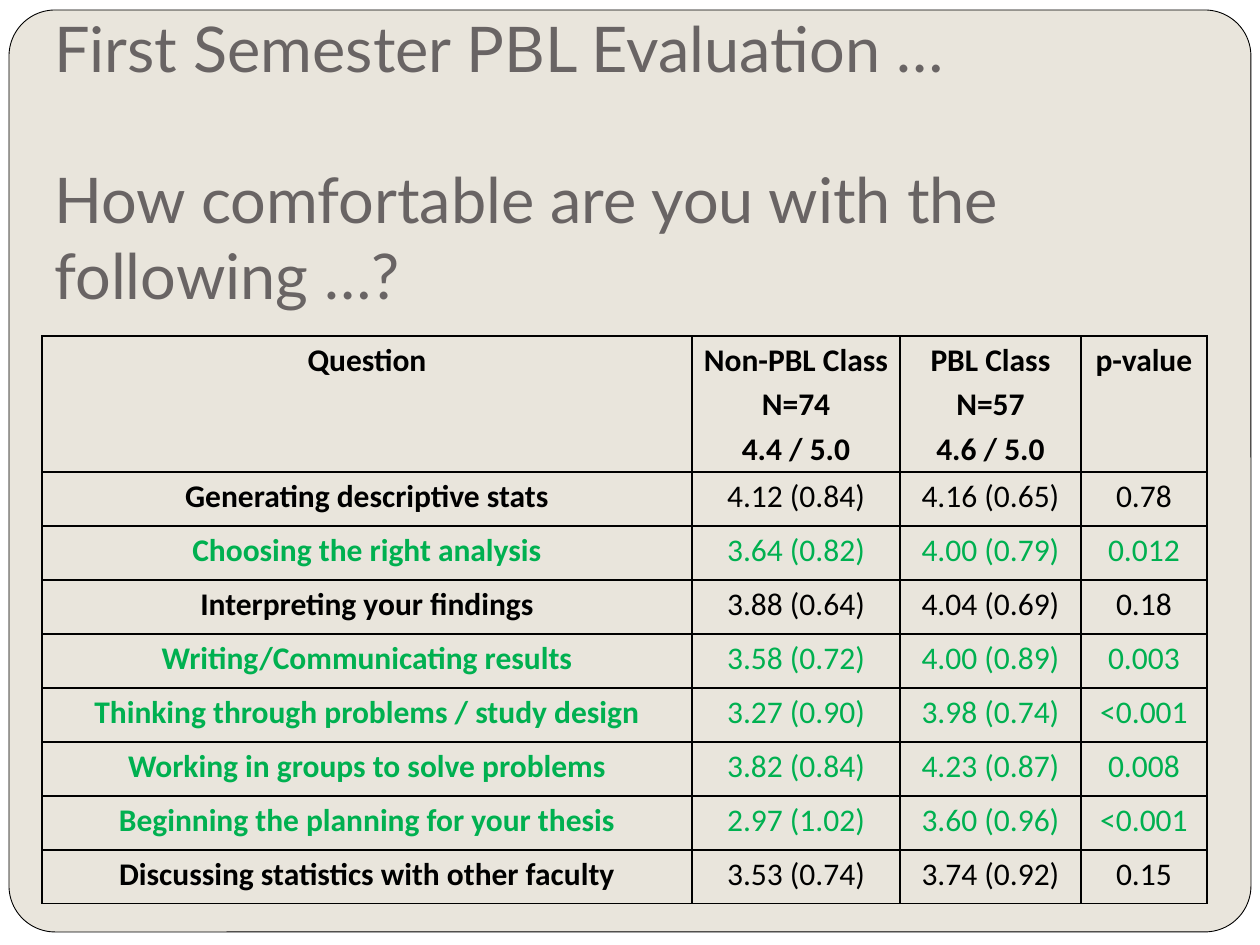
"""Build the first semester PBL evaluation slide."""
from dataclasses import dataclass

from lxml.etree import SubElement
from pptx import Presentation
from pptx.dml.color import RGBColor
from pptx.enum.shapes import MSO_SHAPE
from pptx.enum.text import MSO_ANCHOR, MSO_AUTO_SIZE, PP_ALIGN
from pptx.oxml.ns import qn
from pptx.util import Emu, Pt


@dataclass(frozen=True)
class Theme:
    paper: str = "FFFFFF"
    panel: str = "E9E5DC"
    ink: str = "000000"
    title: str = "696464"
    significant: str = "00B050"
    title_font: str = "Lato"
    table_font: str = "Calibri"
    title_size: int = 36
    table_size: int = 18


@dataclass(frozen=True)
class Box:
    left: int
    top: int
    width: int
    height: int


@dataclass(frozen=True)
class Result:
    question: str
    non_pbl: str
    pbl: str
    p_value: str
    significant: bool = False


THEME = Theme()
PAGE = Box(0, 0, 1260, 945)
PANEL = Box(9, 10, 1242, 922)
TITLE = Box(42, 168, 1187, 157)
TABLE = Box(42, 336, 1165, 568)
COLUMN_WIDTHS = (650, 208, 181, 126)
HEADER_HEIGHT, ROW_HEIGHT = 136, 54
TITLE_LINES = ("First Semester PBL Evaluation …", "How comfortable are you with the following …?")
HEADER = ("Question", "Non-PBL Class\nN=74\n4.4 / 5.0", "PBL Class\nN=57\n4.6 / 5.0", "p-value")
RESULTS = (
    Result("Generating descriptive stats", "4.12 (0.84)", "4.16 (0.65)", "0.78"),
    Result("Choosing the right analysis", "3.64 (0.82)", "4.00 (0.79)", "0.012", True),
    Result("Interpreting your findings", "3.88 (0.64)", "4.04 (0.69)", "0.18"),
    Result("Writing/Communicating results", "3.58 (0.72)", "4.00 (0.89)", "0.003", True),
    Result("Thinking through problems / study design", "3.27 (0.90)", "3.98 (0.74)", "<0.001", True),
    Result("Working in groups to solve problems", "3.82 (0.84)", "4.23 (0.87)", "0.008", True),
    Result("Beginning the planning for your thesis", "2.97 (1.02)", "3.60 (0.96)", "<0.001", True),
    Result("Discussing statistics with other faculty", "3.53 (0.74)", "3.74 (0.92)", "0.15"),
)


def px(length: int) -> Emu:
    return Emu(round(length * 914400 / 126))


def place(box: Box) -> tuple[Emu, Emu, Emu, Emu]:
    return px(box.left), px(box.top), px(box.width), px(box.height)


def style_font(font, name: str, size: int, color: str, bold: bool = False) -> None:
    font.name, font.size, font.bold = name, Pt(size), bold
    font.color.rgb = RGBColor.from_string(color)


def draw_panel(slide, kind: MSO_SHAPE, box: Box, fill: str):
    panel = slide.shapes.add_shape(kind, *place(box))
    panel.shadow.inherit = False
    panel.fill.solid()
    panel.fill.fore_color.rgb = RGBColor.from_string(fill)
    panel.line.fill.background()
    return panel


def draw_title(slide) -> None:
    frame = slide.shapes.add_textbox(*place(TITLE)).text_frame
    frame.word_wrap = True
    frame.auto_size = MSO_AUTO_SIZE.NONE
    frame.vertical_anchor = MSO_ANCHOR.BOTTOM
    frame.margin_bottom = px(13)
    frame.text = "\n".join(TITLE_LINES)
    for para in frame.paragraphs:
        for span in para.runs:
            style_font(span.font, THEME.title_font, THEME.title_size, THEME.title)
    frame.paragraphs[-1].space_before = Pt(1.2 * THEME.title_size)


def draw_borders(cell) -> None:
    properties = cell._tc.get_or_add_tcPr()
    for position, side in enumerate(("lnL", "lnR", "lnT", "lnB")):
        line = SubElement(properties, qn(f"a:{side}"), w=str(Pt(1)))
        fill = SubElement(line, qn("a:solidFill"))
        SubElement(fill, qn("a:srgbClr"), val=THEME.ink)
        properties.insert(position, line)


def fill_cell(cell, text: str, color: str, bold: bool) -> None:
    cell.fill.background()
    draw_borders(cell)
    cell.margin_left = cell.margin_right = px(9)
    cell.margin_top = cell.margin_bottom = 0
    cell.text_frame.text = text
    for para in cell.text_frame.paragraphs:
        para.alignment = PP_ALIGN.CENTER
        para.line_spacing = 1.15
        for span in para.runs:
            style_font(span.font, THEME.table_font, THEME.table_size, color, bold)


def draw_table(slide) -> None:
    shape = slide.shapes.add_table(len(RESULTS) + 1, len(HEADER), *place(TABLE))
    table = shape.table
    table.first_row = table.horz_banding = False
    for column, width in zip(table.columns, COLUMN_WIDTHS):
        column.width = px(width)
    for index, row in enumerate(table.rows):
        row.height = px(ROW_HEIGHT if index else HEADER_HEIGHT)
    for index, text in enumerate(HEADER):
        fill_cell(table.cell(0, index), text, THEME.ink, True)
    for row, result in enumerate(RESULTS, start=1):
        color = THEME.significant if result.significant else THEME.ink
        values = (result.question, result.non_pbl, result.pbl, result.p_value)
        for index, text in enumerate(values):
            fill_cell(table.cell(row, index), text, color, index == 0)


def main() -> None:
    deck = Presentation()
    deck.slide_width, deck.slide_height = px(PAGE.width), px(PAGE.height)
    slide = deck.slides.add_slide(deck.slide_layouts[6])
    slide.background.fill.solid()
    slide.background.fill.fore_color.rgb = RGBColor.from_string(THEME.panel)
    draw_panel(slide, MSO_SHAPE.RECTANGLE, PAGE, THEME.paper)
    panel = draw_panel(slide, MSO_SHAPE.ROUNDED_RECTANGLE, PANEL, THEME.panel)
    panel.adjustments[0] = 0.05
    panel.line.color.rgb = RGBColor.from_string(THEME.ink)
    panel.line.width = Pt(0.5)
    draw_title(slide)
    draw_table(slide)
    deck.save("out.pptx")


if __name__ == "__main__":
    main()
